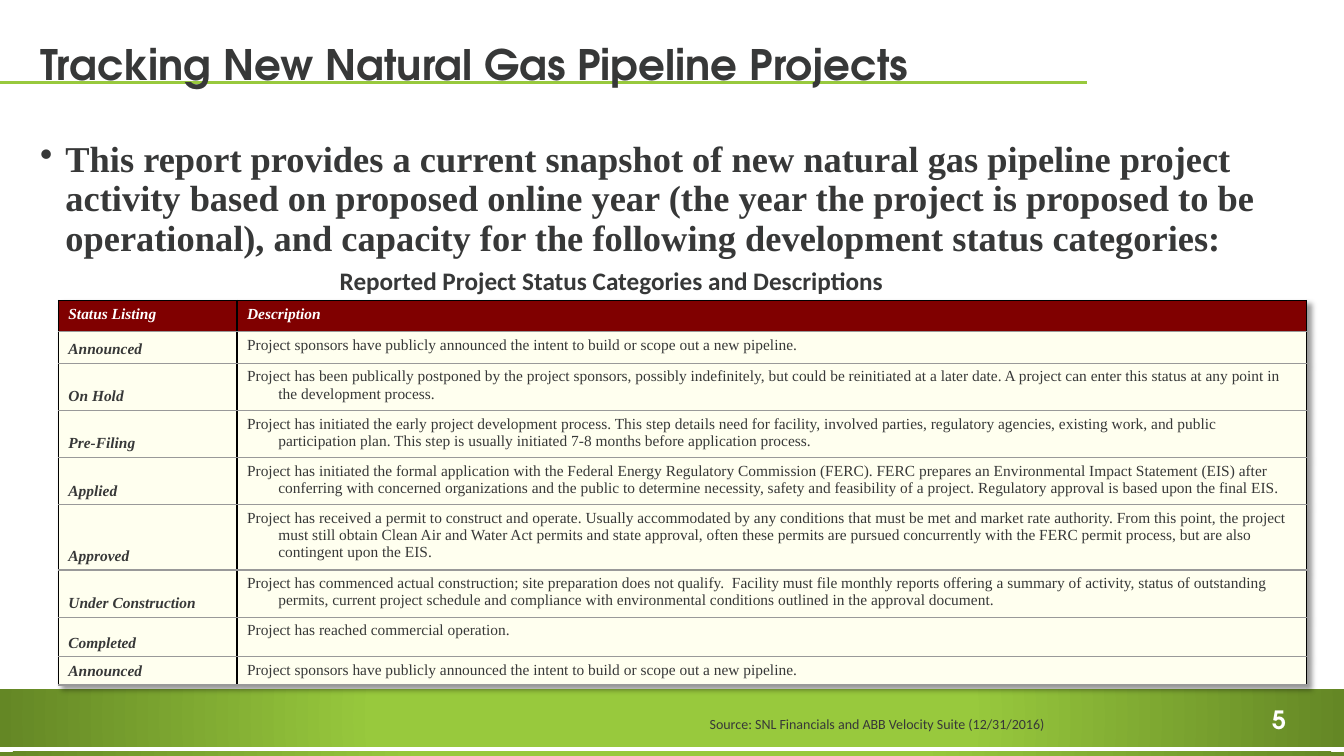
from lxml import etree
from pptx import Presentation
from pptx.dml.color import RGBColor as RGB
from pptx.enum.shapes import MSO_CONNECTOR as CONN, MSO_SHAPE as SHAPE
from pptx.enum.text import MSO_ANCHOR as ANCHOR
from pptx.oxml.ns import qn
from pptx.util import Cm, Pt

COLORS = {
    "lime": "98C93D", "olive": "648725", "ink": "373838", "white": "FFFFFF",
    "maroon": "800000", "cream": "FFFFEF", "black": "000000", "gray": "999999",
}
HEADING, SERIF, SANS = "TeX Gyre Adventor", "Times New Roman", "Calibri"

STATUSES = [
    ("Status Listing", "Description", 0.79),
    ("Announced", "Project sponsors have publicly announced the intent to build or scope out a new pipeline.", 0.79),
    ("On Hold", "Project has been publically postponed by the project sponsors, possibly indefinitely, "
     "but could be reinitiated at a later date. A project can enter this status at any point in "
     "the development process.", 1.13),
    ("Pre-Filing", "Project has initiated the early project development process. This step details need "
     "for facility, involved parties, regulatory agencies, existing work, and public participation plan. "
     "This step is usually initiated 7-8 months before application process.", 1.13),
    ("Applied", "Project has initiated the formal application with the Federal Energy Regulatory Commission "
     "(FERC). FERC prepares an Environmental Impact Statement (EIS) after conferring with concerned "
     "organizations and the public to determine necessity, safety and feasibility of a project. "
     "Regulatory approval is based upon the final EIS.", 1.13),
    ("Approved", "Project has received a permit to construct and operate. Usually accommodated by any "
     "conditions that must be met and market rate authority. From this point, the project must still "
     "obtain Clean Air and Water Act permits and state approval, often these permits are pursued "
     "concurrently with the FERC permit process, but are also contingent upon the EIS.", 1.55),
    ("Under Construction", "Project has commenced actual construction; site preparation does not qualify.  "
     "Facility must file monthly reports offering a summary of activity, status of outstanding permits, "
     "current project schedule and compliance with environmental conditions outlined in the approval "
     "document.", 1.13),
    ("Completed", "Project has reached commercial operation.", 0.99),
    ("Announced", "Project sponsors have publicly announced the intent to build or scope out a new pipeline.", 0.69),
]


class SlideBuilder:
    def __init__(self, slide, colors):
        self.shapes = slide.shapes
        self.colors = colors

    def rgb(self, name):
        return RGB.from_string(self.colors[name])

    def add_color(self, parent, name):
        return etree.SubElement(parent, qn("a:srgbClr"), val=self.colors[name])

    def style(self, p, size, font, color, bold=False, italic=False):
        for r in p.runs:
            f = r.font
            f.size, f.name, f.bold, f.italic = Pt(size), font, bold, italic
            f.color.rgb = self.rgb(color)

    def hang(self, p, indent):
        pPr = p._p.get_or_add_pPr()
        pPr.set("marL", str(Cm(indent)))
        pPr.set("indent", str(-Cm(indent)))
        return pPr

    def line(self, x1, y1, x2, y2, color, width):
        c = self.shapes.add_connector(CONN.STRAIGHT, Cm(x1), Cm(y1), Cm(x2), Cm(y2))
        c.line.color.rgb = self.rgb(color)
        c.line.width = Pt(width)
        etree.SubElement(c._element.spPr, qn("a:effectLst"))

    def band(self, x, y, w, h, inner_stop):
        sp = self.shapes.add_shape(SHAPE.RECTANGLE, Cm(x), Cm(y), Cm(w), Cm(h))
        sp.shadow.inherit = False
        sp.line.fill.background()
        sp.fill.gradient()
        for stop, color, pos in zip(sp.fill.gradient_stops, ("lime", "olive"), (inner_stop, 1)):
            stop.color.rgb = self.rgb(color)
            stop.position = pos
        grad = sp._element.spPr.find(qn("a:gradFill"))
        grad.remove(grad.find(qn("a:lin")))
        radial = etree.SubElement(grad, qn("a:path"), path="circle")
        etree.SubElement(radial, qn("a:fillToRect"), l="50000", t="50000", r="50000", b="50000")

    def text(self, x, y, w, h, text, size, font, color="ink", bold=True,
             wrap=True, anchor=ANCHOR.TOP, spacing=None, bullet=None):
        sp = self.shapes.add_textbox(Cm(x), Cm(y), Cm(w), Cm(h))
        tf = sp.text_frame
        tf.word_wrap, tf.vertical_anchor = wrap, anchor
        tf.text = text
        p = tf.paragraphs[0]
        if bullet:
            etree.SubElement(self.hang(p, 0.64), qn("a:buChar"), char=bullet)
        if spacing:
            p.line_spacing = spacing
        self.style(p, size, font, color, bold)

    def border(self, cell, side, color):
        ln = etree.SubElement(cell._tc.get_or_add_tcPr(), qn(f"a:ln{side}"), w=str(Pt(1)))
        self.add_color(etree.SubElement(ln, qn("a:solidFill")), color)

    def cell(self, cell, text, header, label):
        cell.text = text
        p = cell.text_frame.paragraphs[0]
        self.hang(p, 0.79)
        self.style(p, 11, SERIF, "white" if header else "ink", header or label, header or label)
        cell.vertical_anchor = ANCHOR.BOTTOM if label and not header else ANCHOR.TOP
        for side, color in (("L", "black"), ("R", "black"),
                            ("T", "black" if header else "gray"), ("B", "gray")):
            self.border(cell, side, color)
        cell.fill.solid()
        cell.fill.fore_color.rgb = self.rgb("maroon" if header else "cream")

    def table(self, x, y, widths, rows):
        heights = [row[-1] for row in rows]
        tbl = self.shapes.add_table(len(rows), len(widths), Cm(x), Cm(y),
                                    Cm(sum(widths)), Cm(sum(heights))).table
        tbl.horz_banding = False
        for col, width in zip(tbl.columns, widths):
            col.width = Cm(width)
        for i, (*texts, height) in enumerate(rows):
            tbl.rows[i].height = Cm(height)
            for j, text in enumerate(texts):
                self.cell(tbl.cell(i, j), text, i == 0, j == 0)
        effects = etree.Element(qn("a:effectLst"))
        shadow = etree.SubElement(effects, qn("a:outerShdw"), blurRad=str(Pt(4)),
                                  dist=str(Pt(4)), dir="2700000", algn="tl", rotWithShape="0")
        etree.SubElement(self.add_color(shadow, "black"), qn("a:alpha"), val="40000")
        tbl._tbl.tblPr.insert(0, effects)


def main():
    prs = Presentation()
    prs.slide_width, prs.slide_height = Cm(33.86), Cm(19.05)
    s = SlideBuilder(prs.slides.add_slide(prs.slide_layouts[6]), COLORS)

    s.line(0, 2.08, 27.38, 2.08, "lime", 1.75)
    s.band(0, 17.37, 33.86, 1.45, 0.44)
    s.band(0, 18.95, 33.86, 0.13, 0.37)
    s.text(31.8, 17.63, 1.22, 1.02, "5", 18, HEADING, "white")
    s.text(0.76, 3.43, 32.18, 11.15,
           "This report provides a current snapshot of new natural gas pipeline project activity "
           "based on proposed online year (the year the project is proposed to be operational), "
           "and capacity for the following development status categories:",
           26, SERIF, spacing=0.9, bullet="•")
    s.text(0.76, 0.71, 32.18, 1.68, "Tracking New Natural Gas Pipeline Projects",
           30, HEADING, anchor=ANCHOR.BOTTOM, spacing=0.9)
    s.table(1.47, 7.57, (4.5, 26.95), STATUSES)
    s.text(8.31, 6.55, 14.55, 1.02, "Reported Project Status Categories and Descriptions", 18, SANS)
    s.text(17.63, 17.91, 9.09, 0.69, "Source: SNL Financials and ABB Velocity Suite (12/31/2016)",
           10, SANS, bold=False, wrap=False)

    prs.save("out.pptx")


if __name__ == "__main__":
    main()
